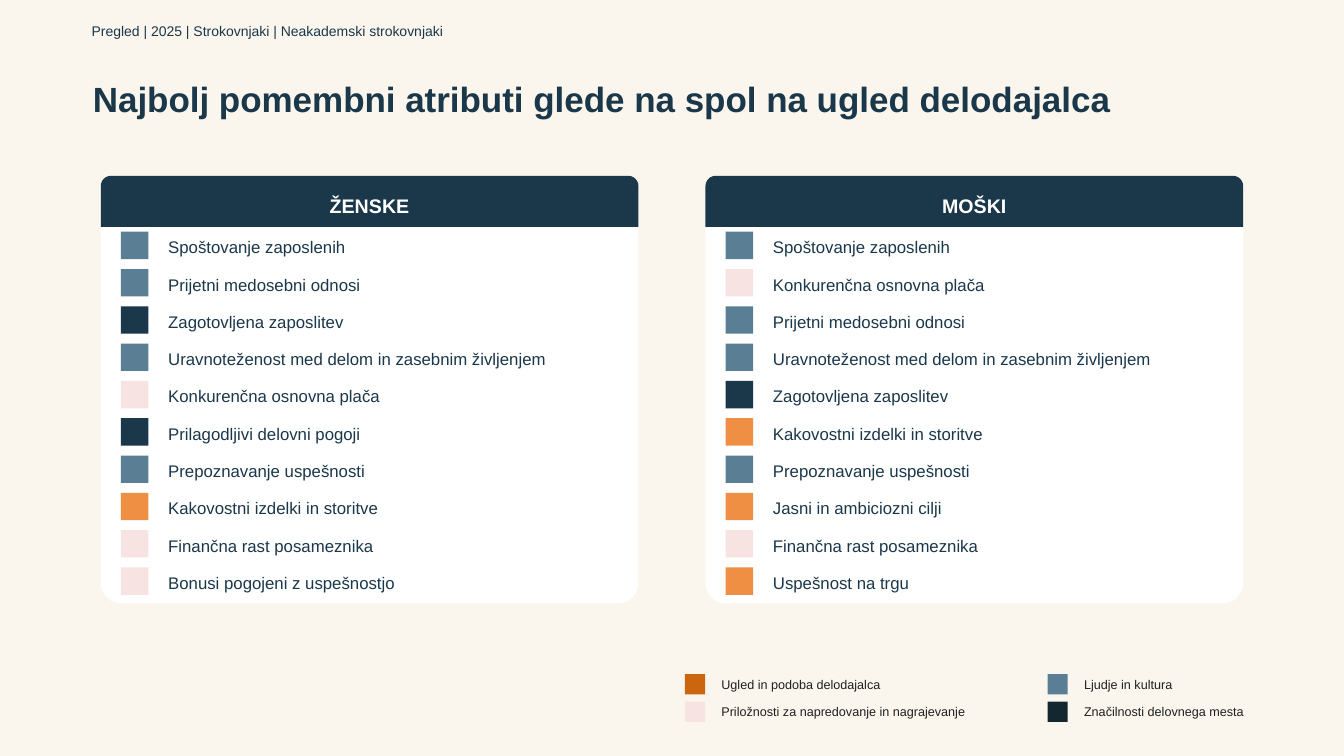
from dataclasses import dataclass

from pptx import Presentation
from pptx.dml.color import RGBColor
from pptx.enum.shapes import MSO_SHAPE as Preset
from pptx.enum.text import MSO_ANCHOR as Anchor, MSO_AUTO_SIZE as AutoSize, PP_ALIGN as Align
from pptx.shapes.autoshape import Shape
from pptx.slide import Slide
from pptx.util import Cm, Pt

CREAM = RGBColor(0xFA, 0xF6, 0xED)
WHITE = RGBColor(0xFF, 0xFF, 0xFF)
NAVY = RGBColor(0x1B, 0x37, 0x4A)
STEEL = RGBColor(0x5A, 0x7F, 0x95)
ROSE = RGBColor(0xF7, 0xE3, 0xE1)
ORANGE = RGBColor(0xEE, 0x8F, 0x44)
RUST = RGBColor(0xCC, 0x65, 0x10)
INK = RGBColor(0x13, 0x27, 0x30)
CHARCOAL = RGBColor(0x20, 0x20, 0x20)

# Lengths in centimetres
PAGE_WIDTH, PAGE_HEIGHT = 33.87, 19.05
CARD_WIDTH, CARD_TOP, HEADER_HEIGHT, BODY_HEIGHT = 13.55, 4.43, 1.29, 9.49
ROW_TOP, ROW_STEP, ROW_MARKER = 5.84, 0.94, 0.69
LEGEND_TOP, LEGEND_STEP, LEGEND_MARKER = 16.99, 0.69, 0.51


@dataclass(frozen=True)
class Entry:
    text: str
    color: RGBColor


@dataclass(frozen=True)
class Column:
    """Entries stacked from top to bottom, starting at a left edge."""
    left: float
    entries: tuple[Entry, ...]
    heading: str = ""


@dataclass(frozen=True)
class Box:
    left: float
    top: float
    width: float
    height: float

    def lengths(self) -> tuple[Cm, Cm, Cm, Cm]:
        return Cm(self.left), Cm(self.top), Cm(self.width), Cm(self.height)


CARDS = (
    Column(2.54, (
        Entry("Spoštovanje zaposlenih", STEEL),
        Entry("Prijetni medosebni odnosi", STEEL),
        Entry("Zagotovljena zaposlitev", NAVY),
        Entry("Uravnoteženost med delom in zasebnim življenjem", STEEL),
        Entry("Konkurenčna osnovna plača", ROSE),
        Entry("Prilagodljivi delovni pogoji", NAVY),
        Entry("Prepoznavanje uspešnosti", STEEL),
        Entry("Kakovostni izdelki in storitve", ORANGE),
        Entry("Finančna rast posameznika", ROSE),
        Entry("Bonusi pogojeni z uspešnostjo", ROSE),
    ), "ŽENSKE"),
    Column(17.78, (
        Entry("Spoštovanje zaposlenih", STEEL),
        Entry("Konkurenčna osnovna plača", ROSE),
        Entry("Prijetni medosebni odnosi", STEEL),
        Entry("Uravnoteženost med delom in zasebnim življenjem", STEEL),
        Entry("Zagotovljena zaposlitev", NAVY),
        Entry("Kakovostni izdelki in storitve", ORANGE),
        Entry("Prepoznavanje uspešnosti", STEEL),
        Entry("Jasni in ambiciozni cilji", ORANGE),
        Entry("Finančna rast posameznika", ROSE),
        Entry("Uspešnost na trgu", ORANGE),
    ), "MOŠKI"),
)
LEGEND = (
    Column(17.26, (
        Entry("Ugled in podoba delodajalca", RUST),
        Entry("Priložnosti za napredovanje in nagrajevanje", ROSE),
    )),
    Column(26.4, (
        Entry("Ljudje in kultura", STEEL),
        Entry("Značilnosti delovnega mesta", INK),
    )),
)


def write(shape: Shape, text: str, size: float, color: RGBColor, bold: bool = False,
          align: Align = Align.LEFT, inset: float = 0) -> None:
    """Put one vertically centred line of text in a shape."""
    frame = shape.text_frame
    frame_format = {
        "word_wrap": True, "auto_size": AutoSize.NONE, "vertical_anchor": Anchor.MIDDLE,
        "margin_left": Cm(inset), "margin_right": 0, "margin_top": 0, "margin_bottom": 0,
    }
    for name, value in frame_format.items():
        setattr(frame, name, value)
    para = frame.paragraphs[0]
    para.alignment = align
    span = para.add_run()
    span.text = text
    for name, value in {"name": "Arial", "size": Pt(size), "bold": bold}.items():
        setattr(span.font, name, value)
    span.font.color.rgb = color


def add_label(page: Slide, box: Box, text: str, size: float, color: RGBColor,
              inset: float = 0) -> None:
    write(page.shapes.add_textbox(*box.lengths()), text, size, color, inset=inset)


def add_block(page: Slide, preset: Preset, box: Box, color: RGBColor,
              corners: tuple[float, ...] = ()) -> Shape:
    block = page.shapes.add_shape(preset, *box.lengths())
    block.shadow.inherit = False
    block.fill.solid()
    block.fill.fore_color.rgb = color
    block.line.fill.background()
    for index, corner in enumerate(corners):
        block.adjustments[index] = corner
    return block


def add_card(page: Slide, card: Column) -> None:
    body = Box(card.left, CARD_TOP + HEADER_HEIGHT, CARD_WIDTH, BODY_HEIGHT)
    add_block(page, Preset.ROUND_2_SAME_RECTANGLE, body, WHITE, (0, 0.055))
    top = Box(card.left, CARD_TOP, CARD_WIDTH, HEADER_HEIGHT)
    header = add_block(page, Preset.ROUND_2_SAME_RECTANGLE, top, NAVY, (0.2, 0))
    header_label = Box(card.left, CARD_TOP + 0.16, CARD_WIDTH, HEADER_HEIGHT - 0.16)
    write(header, card.heading, 14, WHITE, bold=True, align=Align.CENTER)
    header.text_frame.margin_top = Cm(header_label.top - CARD_TOP)
    for row, entry in enumerate(card.entries):
        y = ROW_TOP + row * ROW_STEP
        marker = Box(card.left + 0.51, y, ROW_MARKER, ROW_MARKER)
        add_block(page, Preset.RECTANGLE, marker, entry.color)
        label = Box(card.left + 1.7, y + 0.04, 10.16, ROW_MARKER)
        add_label(page, label, entry.text, 12, NAVY)


def add_legend(page: Slide, column: Column) -> None:
    for row, entry in enumerate(column.entries):
        y = LEGEND_TOP + row * LEGEND_STEP
        marker = Box(column.left, y, LEGEND_MARKER, LEGEND_MARKER)
        add_block(page, Preset.RECTANGLE, marker, entry.color)
        label = Box(column.left + 0.92, y, 6.5, LEGEND_MARKER)
        add_label(page, label, entry.text, 9, CHARCOAL)


def add_title(page: Slide, text: str) -> None:
    title = page.shapes.title
    title.left, title.top, title.width, title.height = Box(2.34, 1.55, 29.21, 2.01).lengths()
    write(title, text, 25, NAVY, bold=True)
    title.text_frame.paragraphs[0].line_spacing = 0.9


def main() -> None:
    deck = Presentation()
    deck.slide_width, deck.slide_height = Cm(PAGE_WIDTH), Cm(PAGE_HEIGHT)
    page = deck.slides.add_slide(deck.slide_layouts.get_by_name("Title Only"))
    page.background.fill.solid()
    page.background.fill.fore_color.rgb = CREAM
    add_title(page, "Najbolj pomembni atributi glede na spol na ugled delodajalca")
    add_label(page, Box(0, 0, PAGE_WIDTH, 1.55),
              "Pregled | 2025 | Strokovnjaki | Neakademski strokovnjaki", 10, NAVY, inset=2.31)
    for card in CARDS:
        add_card(page, card)
    for column in LEGEND:
        add_legend(page, column)
    deck.save("out.pptx")


if __name__ == "__main__":
    main()
